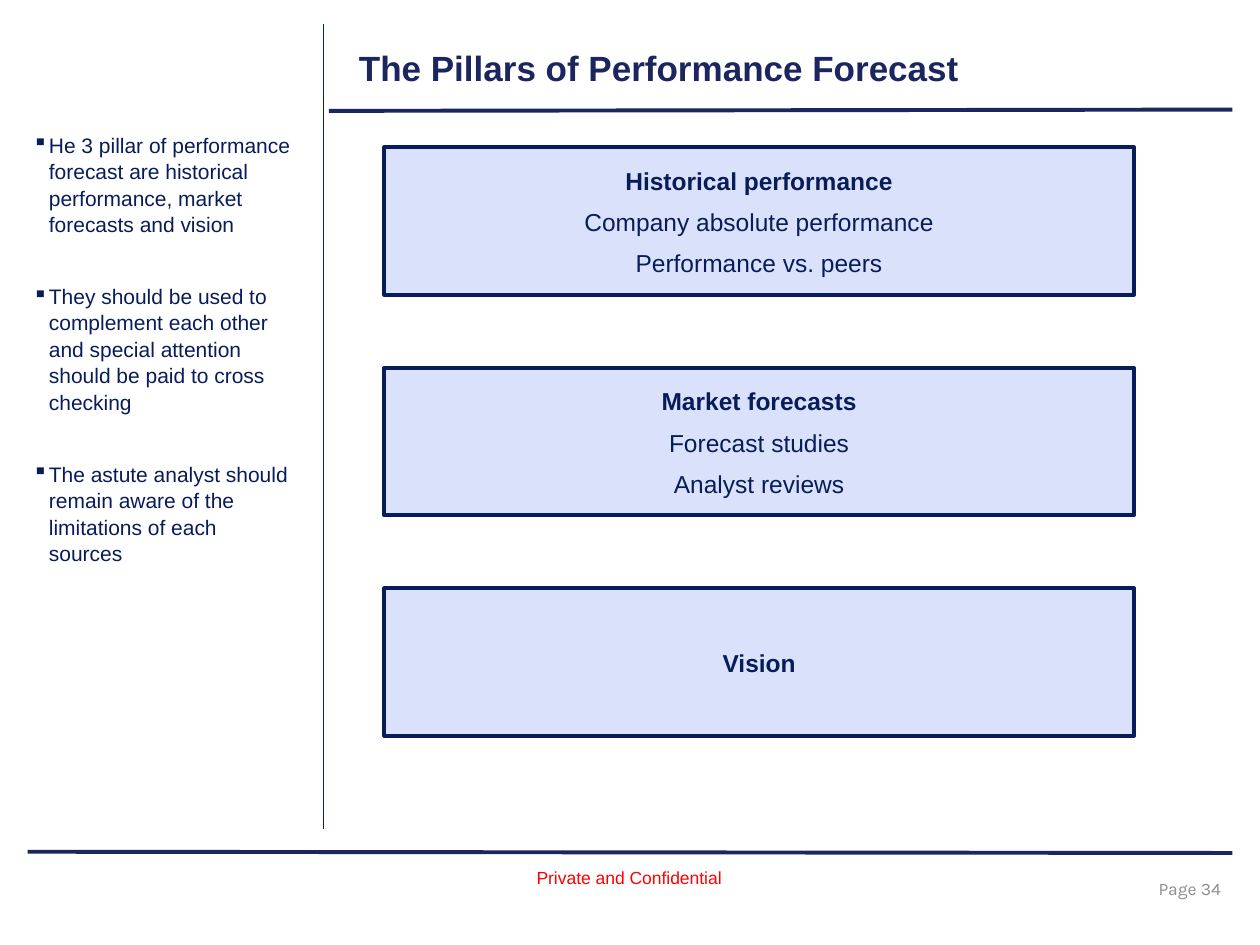
import pptx
import pptx.dml.color
import pptx.enum.shapes
import pptx.enum.text
import pptx.oxml.ns
import pptx.util
from lxml import etree
from pptx.util import Inches, Pt

COLORS = {
    "background": "FFFFFF",
    "rule": "1B265F",
    "divider": "002368",
    "text": "091C5A",
    "pillar": "DAE2FB",
    "page": "8C8C8C",
    "notice": "FF0000",
}
ALIGN = pptx.enum.text.PP_ALIGN
ANCHOR = pptx.enum.text.MSO_ANCHOR
LINE_SPACING = 1.05

BULLETS = [
    "He 3 pillar of performance forecast are historical performance, market forecasts and vision",
    "They should be used to complement each other and special attention should be paid to cross checking",
    "The astute analyst should remain aware of the limitations of each sources",
]
PILLARS = [
    ["Historical performance", "Company absolute performance", "Performance vs. peers"],
    ["Market forecasts", "Forecast studies", "Analyst reviews"],
    ["Vision"],
]


def color(name):
    """Return the named colour as an RGB value."""
    return pptx.dml.color.RGBColor.from_string(COLORS[name])


def add_line(slide, start, end, color_name, width):
    """Draw a straight line between two points given in inches."""
    line = slide.shapes.add_connector(
        pptx.enum.shapes.MSO_CONNECTOR.STRAIGHT, *map(Inches, start + end))
    line.line.color.rgb = color(color_name)
    line.line.width = Pt(width)
    properties = line._element.spPr
    etree.SubElement(properties, pptx.oxml.ns.qn("a:effectLst"))


def add_run(paragraph, text, size, color_name, bold=False, font="Arial"):
    """Add one formatted run to a paragraph."""
    run = paragraph.add_run()
    run.text = text
    run.font.name = font
    run.font.size = Pt(size)
    run.font.bold = bold
    run.font.color.rgb = color(color_name)


def add_text_frame(slide, box, anchor=ANCHOR.TOP, wrap=True):
    """Add a text box and return its text frame."""
    frame = slide.shapes.add_textbox(*map(Inches, box)).text_frame
    frame.word_wrap = wrap
    frame.vertical_anchor = anchor
    return frame


def next_paragraph(frame, index):
    """Return the first paragraph of a frame or add a new one."""
    return frame.add_paragraph() if index else frame.paragraphs[0]


def add_bullet(paragraph):
    """Give a paragraph a square bullet with a hanging indent."""
    properties = paragraph._p.get_or_add_pPr()
    properties.set("marL", str(Inches(0.13)))
    properties.set("indent", str(-Inches(0.13)))
    bullet = etree.SubElement(properties, pptx.oxml.ns.qn("a:buChar"))
    bullet.set("char", "▪")


def add_header(slide, box):
    """Place the title with the rule below it."""
    left, top, width, height = box
    frame = add_text_frame(slide, (left + 0.14, top, width - 0.42, height))
    paragraph = frame.paragraphs[0]
    paragraph.line_spacing = LINE_SPACING
    add_run(paragraph, "The Pillars of Performance Forecast", 20, "rule", bold=True)
    add_line(slide, (left, top + 0.58), (left + width, top + 0.57), "rule", 2.25)


def add_sidebar(slide, box):
    """Place the bulleted comments and the divider to their right."""
    left, top, width, height = box
    frame = add_text_frame(slide, box)
    for index, text in enumerate(BULLETS):
        paragraph = next_paragraph(frame, index)
        add_bullet(paragraph)
        paragraph.line_spacing = LINE_SPACING
        paragraph.space_after = Pt(26)
        add_run(paragraph, text, 12, "text")
    divider = left + width + 0.16
    add_line(slide, (divider, 0.19), (divider, 6.58), "divider", 0.75)


def add_pillar(slide, box, lines):
    """Draw one pillar with a bold heading and its details."""
    shape = slide.shapes.add_shape(
        pptx.enum.shapes.MSO_SHAPE.RECTANGLE, *map(Inches, box))
    shape.shadow.inherit = False
    shape.fill.solid()
    shape.fill.fore_color.rgb = color("pillar")
    shape.line.color.rgb = color("text")
    shape.line.width = Pt(2.25)
    frame = shape.text_frame
    frame.word_wrap = True
    frame.vertical_anchor = ANCHOR.MIDDLE
    for index, text in enumerate(lines):
        paragraph = next_paragraph(frame, index)
        paragraph.alignment = ALIGN.CENTER
        paragraph.line_spacing = LINE_SPACING
        paragraph.space_after = Pt(6)
        add_run(paragraph, text, 14, "text", bold=index == 0)


def add_pillars(slide, box):
    """Stack the pillars in the box with equal gaps."""
    left, top, width, height = box
    pillar_height = 1.17
    pitch = (height - pillar_height) / (len(PILLARS) - 1)
    for index, lines in enumerate(PILLARS):
        add_pillar(slide, (left, top + index * pitch, width, pillar_height), lines)


def add_footer(slide, box):
    """Place the bottom rule, the notice and the page number."""
    left, top, width, height = box
    right = left + width
    add_line(slide, (left, top), (right, top + 0.01), "rule", 2.25)
    notice = add_text_frame(slide, (left + 3.94, top + 0.07, 1.68, 0.27), wrap=False)
    add_run(notice.paragraphs[0], "Private and Confidential", 10, "notice")
    page = add_text_frame(
        slide, (right - 2.29, top + 0.09, 2.33, height - 0.09), ANCHOR.MIDDLE)
    page.paragraphs[0].alignment = ALIGN.RIGHT
    add_run(page.paragraphs[0], "Page 34 ", 10, "page", font="Karla")


def main():
    """Build the slide and save the presentation."""
    presentation = pptx.Presentation()
    presentation.slide_width = Inches(10)
    presentation.slide_height = Inches(7.5)
    slide = presentation.slides.add_slide(presentation.slide_layouts[6])
    slide.background.fill.solid()
    slide.background.fill.fore_color.rgb = color("background")
    add_footer(slide, (0.22, 6.76, 9.56, 0.49))
    add_header(slide, (2.61, 0.3, 7.17, 0.53))
    add_sidebar(slide, (0.16, 0.99, 2.25, 5.38))
    add_pillars(slide, (3.05, 1.17, 5.95, 4.67))
    presentation.save("out.pptx")


if __name__ == "__main__":
    main()
